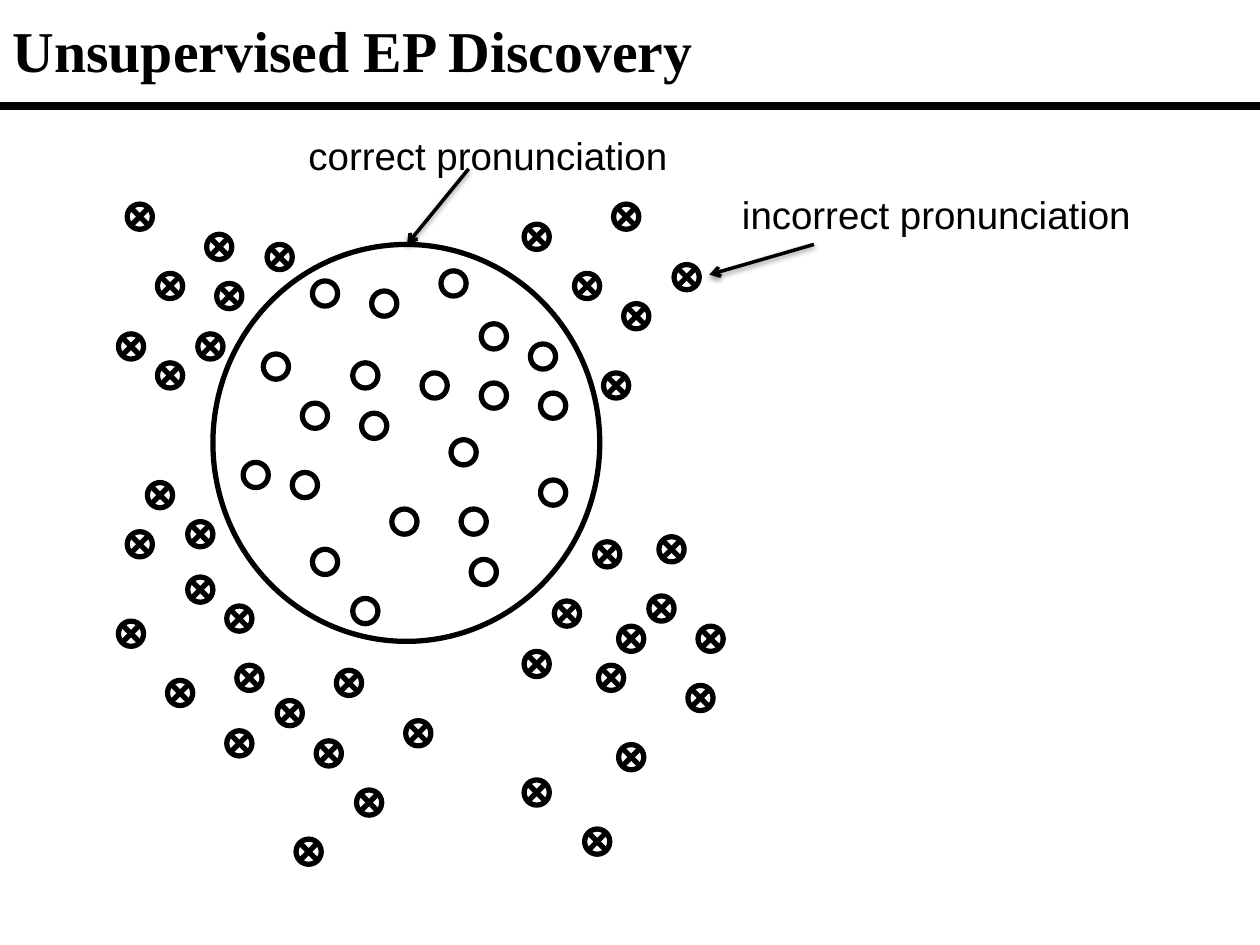
from lxml import etree
from pptx import Presentation
from pptx import util as u
from pptx.dml.color import RGBColor
from pptx.enum import shapes, text
from pptx.oxml import parse_xml
from pptx.oxml.ns import qn

PX = 9144
DOT = 20
COLORS = {"ink": "000000", "paper": "FFFFFF"}
RIGHT = [
    (248, 223), (240, 320), (280, 288), (193, 367), (209, 281), (287, 328),
    (232, 375), (382, 257), (382, 304), (421, 273), (335, 296), (350, 215),
    (429, 312), (429, 381), (311, 404), (280, 475), (366, 404), (295, 231),
    (248, 436), (374, 444), (358, 349),
]
WRONG = [
    (133, 540), (101, 162), (267, 532), (235, 666), (220, 556), (180, 580),
    (464, 658), (523, 426), (472, 430), (180, 481), (149, 458), (212, 194),
    (322, 572), (479, 296), (94, 265), (475, 528), (491, 591), (416, 517),
    (491, 497), (440, 477), (515, 473), (188, 528), (117, 383), (251, 588),
    (416, 619), (94, 493), (487, 162), (535, 210), (495, 241), (416, 178),
    (149, 414), (101, 422), (157, 265), (283, 627), (164, 186), (125, 217),
    (125, 288), (172, 225), (456, 217), (554, 497), (546, 544),
]
SHADOW = (
    '<a:effectLst xmlns:a="http://schemas.openxmlformats.org/drawingml/2006/main">'
    '<a:outerShdw blurRad="39370" dist="20320" dir="5400000" rotWithShape="0">'
    '<a:srgbClr val="{}"><a:alpha val="38000"/></a:srgbClr>'
    '</a:outerShdw></a:effectLst>'
)


def px(*vals):
    return [u.Emu(v * PX) for v in vals]


def color(name):
    return RGBColor.from_string(COLORS[name])


def set_line(line, width):
    line.color.rgb = color("ink")
    line.width = u.Pt(width)


def set_font(para, name, size, bold=False):
    font = para.font
    font.name = name
    font.size = u.Pt(size)
    font.bold = bold
    font.color.rgb = color("ink")


def add_title(slide, words):
    title = slide.shapes.title
    title.left, title.top, title.width, title.height = px(0, 0, 1000, 79)
    frame = title.text_frame
    frame.text = words
    frame.vertical_anchor = text.MSO_ANCHOR.MIDDLE
    para = frame.paragraphs[0]
    para.alignment = text.PP_ALIGN.LEFT
    set_font(para, "Times New Roman", 33, True)


def add_label(slide, words, *box):
    frame = slide.shapes.add_textbox(*px(*box)).text_frame
    frame.word_wrap = True
    frame.auto_size = text.MSO_AUTO_SIZE.SHAPE_TO_FIT_TEXT
    frame.text = words
    set_font(frame.paragraphs[0], "Arial", 22)


def add_mark(group, kind, *box):
    mark = group.shapes.add_shape(kind, *px(*box))
    mark.shadow.inherit = False
    mark.fill.background()
    set_line(mark.line, 3)


def add_marks(slide, kind, spots):
    group = slide.shapes.add_group_shape()
    for left, top in spots:
        add_mark(group, kind, left, top, DOT, DOT)
    return group


def add_line(slide, width, *ends):
    line = slide.shapes.add_connector(shapes.MSO_CONNECTOR.STRAIGHT, *px(*ends))
    set_line(line.line, width)
    return line


def add_rule(slide, top):
    rule = add_line(slide, 4.5, 0, top, 1000, top)
    etree.SubElement(rule._element.spPr, qn("a:effectLst"))


def add_arrow(slide, *ends):
    arrow = add_line(slide, 2, *ends)
    tip = etree.SubElement(arrow.line._get_or_add_ln(), qn("a:tailEnd"))
    tip.set("type", "arrow")
    arrow._element.spPr.append(parse_xml(SHADOW.format(COLORS["ink"])))


def main():
    deck = Presentation()
    deck.slide_width, deck.slide_height = px(1000, 750)
    slide = deck.slides.add_slide(deck.slide_layouts[5])
    fill = slide.background.fill
    fill.solid()
    fill.fore_color.rgb = color("paper")

    add_rule(slide, 84)
    add_title(slide, "Unsupervised EP Discovery")
    kinds = shapes.MSO_SHAPE
    group = add_marks(slide, kinds.OVAL, RIGHT)
    add_mark(group, kinds.OVAL, 169, 194, 307, 315)
    add_label(slide, "correct pronunciation", 235, 100, 336, 47)
    add_label(slide, "incorrect pronunciation", 579, 147, 331, 47)
    add_arrow(slide, 646, 194, 563, 218)
    add_arrow(slide, 372, 134, 323, 194)
    add_marks(slide, kinds.FLOWCHART_SUMMING_JUNCTION, WRONG)
    deck.save("out.pptx")


if __name__ == "__main__":
    main()
